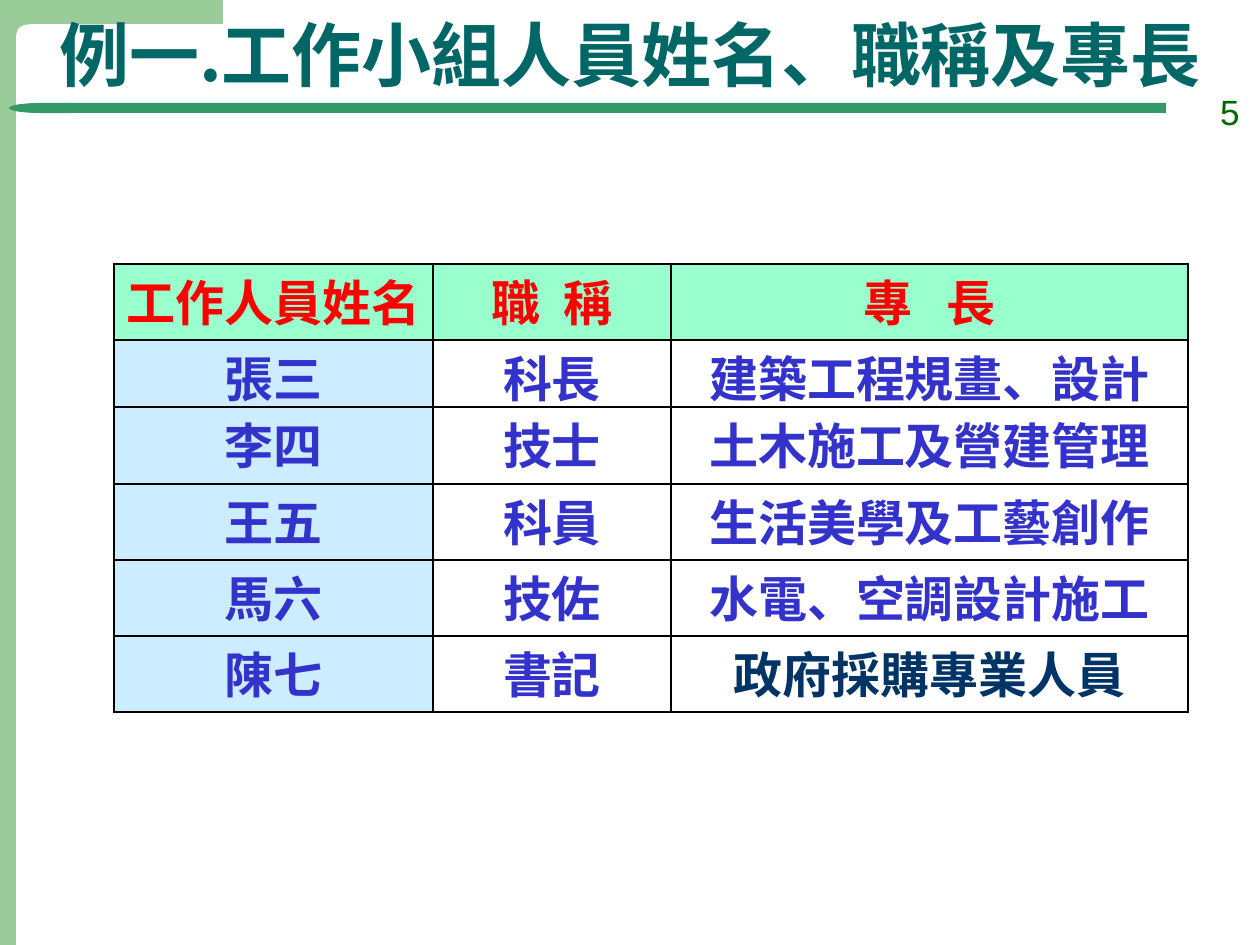
import pptx
import pptx.util
import pptx.dml.color
import pptx.enum.shapes
import pptx.enum.text
import pptx.oxml.ns
import lxml.etree

# Content
TITLE = "例一.工作小組人員姓名、職稱及專長"
PAGE = "5"
ROWS = [
    ("工作人員姓名", "職  稱", "專   長"),
    ("張三", "科長", "建築工程規畫、設計"),
    ("李四", "技士", "土木施工及營建管理"),
    ("王五", "科員", "生活美學及工藝創作"),
    ("馬六", "技佐", "水電、空調設計施工"),
    ("陳七", "書記", "政府採購專業人員"),
]
WIDTHS = [319, 238, 517]
HEIGHTS = [76, 67, 77, 76, 76, 76]
CORNER = [(0, 0), (223, 0), (223, 24), (32, 24), (24, 25), (20, 27),
          (18, 29), (16, 35), (15, 37), (0, 37)]
CJK = "Noto Sans CJK SC"
SCALE = 914400 / 126

KIND = pptx.enum.shapes.MSO_SHAPE
ALIGN = pptx.enum.text.PP_ALIGN
ANCHOR = pptx.enum.text.MSO_ANCHOR


def px(n):
    return round(n * SCALE)


def color(code):
    return pptx.dml.color.RGBColor.from_string(code)


def paint(shape, code):
    shape.shadow.inherit = False
    shape.fill.solid()
    shape.fill.fore_color.rgb = color(code)
    shape.line.fill.background()


def block(kind, box, code):
    shape = slide.shapes.add_shape(kind, *map(px, box))
    paint(shape, code)
    return shape


def write(frame, text, size, code, font, bold, align):
    frame.text = text
    line = frame.paragraphs[0]
    line.alignment = align
    run = line.runs[0]
    run.font.size = pptx.util.Pt(size)
    run.font.bold = bold
    run.font.name = font
    run.font.color.rgb = color(code)
    east = lxml.etree.SubElement(run.font._element, pptx.oxml.ns.qn("a:ea"))
    east.set("typeface", font)
    return line


def label(box, anchor, *style):
    frame = slide.shapes.add_textbox(*map(px, box)).text_frame
    frame.word_wrap = True
    frame.vertical_anchor = anchor
    write(frame, *style)


def border(cell):
    props = cell._tc.get_or_add_tcPr()
    for spot, side in enumerate(("lnL", "lnR", "lnT", "lnB")):
        line = lxml.etree.Element(pptx.oxml.ns.qn("a:" + side), w="12700")
        fill = lxml.etree.SubElement(line, pptx.oxml.ns.qn("a:solidFill"))
        lxml.etree.SubElement(fill, pptx.oxml.ns.qn("a:srgbClr"), val="000000")
        props.insert(spot, line)


deck = pptx.Presentation()
deck.slide_width, deck.slide_height = px(1260), px(945)
slide = deck.slides.add_slide(deck.slide_layouts[6])

# Green edge and corner
block(KIND.RECTANGLE, (0, 0, 16, 945), "99CC99")
path = slide.shapes.build_freeform(*CORNER[0], scale=SCALE)
path.add_line_segments(CORNER[1:], close=True)
paint(path.convert_to_shape(), "99CC99")

# Rule under the title, with a round left end
block(KIND.RECTANGLE, (68, 103, 1098, 10), "339966")
block(KIND.FLOWCHART_DELAY, (9, 103, 62, 10), "339966").rotation = 180

# Title and page number
label((0, 0, 1260, 106), ANCHOR.MIDDLE,
      TITLE, 40, "006666", CJK, True, ALIGN.CENTER)
label((1158, 76, 94, 63), ANCHOR.BOTTOM,
      PAGE, 20, "006600", "Arial", False, ALIGN.RIGHT)

# Staff table
table = slide.shapes.add_table(
    len(ROWS), len(WIDTHS), px(114), px(264),
    px(sum(WIDTHS)), px(sum(HEIGHTS))).table
for col, width in zip(table.columns, WIDTHS):
    col.width = px(width)
for row, height in zip(table.rows, HEIGHTS):
    row.height = px(height)

last = (len(ROWS) - 1, len(WIDTHS) - 1)
for r, row in enumerate(ROWS):
    for c, text in enumerate(row):
        cell = table.cell(r, c)
        cell.margin_bottom = 0
        ink = "FF0000" if r == 0 else "003366" if (r, c) == last else "3333CC"
        line = write(cell.text_frame, text, 28, ink, CJK, True, ALIGN.CENTER)
        line.line_spacing = 0.9
        if r == 0 or c == 0:
            cell.fill.solid()
            cell.fill.fore_color.rgb = color("99FFCC" if r == 0 else "CCECFF")
        else:
            cell.fill.background()
        border(cell)

deck.save("out.pptx")
